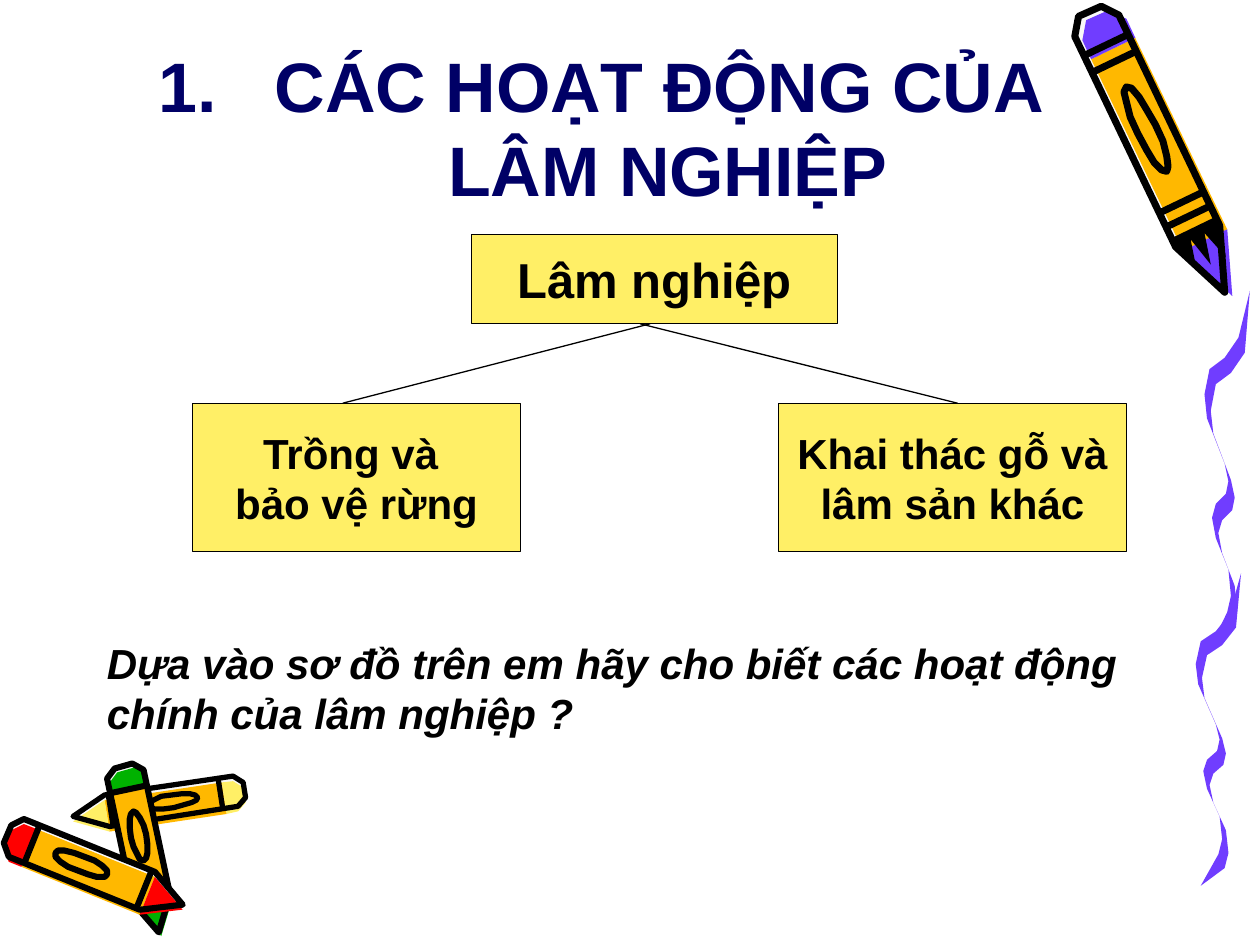
from dataclasses import dataclass
from math import cos, hypot, pi, sin

from lxml import etree
from pptx import Presentation
from pptx.dml.color import RGBColor
from pptx.enum.shapes import MSO_CONNECTOR, MSO_SHAPE
from pptx.enum.text import MSO_ANCHOR, MSO_AUTO_SIZE, PP_ALIGN
from pptx.oxml.ns import qn
from pptx.util import Pt

PX = 9144  # EMU per px, 100 px to the inch
FONT = "Arial"
LINE = MSO_CONNECTOR.STRAIGHT
RECT = MSO_SHAPE.RECTANGLE
CENTER = PP_ALIGN.CENTER
MIDDLE, BOTTOM = MSO_ANCHOR.MIDDLE, MSO_ANCHOR.BOTTOM
FIXED = MSO_AUTO_SIZE.NONE
HEX = {
    "ink": "000000", "navy": "000066", "violet": "703DFF", "amber": "FFB800",
    "lemon": "FFEF66", "red": "FF0000", "green": "00B200", "pale": "F8F8F8",
}

# Crayon corners: share of the length from the tail, share of the half width.
NECK, CAP = 0.8, 0.12
TAIL = [(0.05, 1), (0, 0.5), (0, -0.5), (0.05, -1)]
HULL = TAIL + [(NECK, -1), (1, 0), (NECK, 1)]
BARREL = [(CAP, -1), (NECK, -1), (NECK, 1), (CAP, 1)]
BUTT = TAIL + [(CAP, -1), (CAP, 1)]
POINT = [(NECK, -1), (1, 0), (NECK, 1)]
OVAL = [(0.42 + 0.15 * cos(n * pi / 8), 0.4 * sin(n * pi / 8)) for n in range(16)]
TEETH = [(NECK + 0.1 * (n % 2), n / 3 - 1) for n in range(7)]
COLLAR = [(NECK - 0.03, 1), (NECK - 0.03, -1)] + TEETH

# Upper edge of one ribbon wave; the lower edge is a slanted nib away.
WAVE, NIB = (36, 248), (5, 11)
EDGE = [
    (36, 0), (27, 32), (16, 46), (4, 54), (0, 72), (2, 88), (16, 120), (19, 132),
    (17, 141), (9, 148), (6, 157), (9, 171), (19, 193), (21, 211), (18, 223), (4, 248),
]


@dataclass
class Crayon:
    tail: tuple
    tip: tuple
    width: int
    tint: str
    shift: tuple  # how far the colour slips from the ink
    pen: float
    bands: tuple = (0.14, 0.78)
    collar: bool = False


CRAYONS = [
    Crayon((194, 27), (58, 48), 25, "lemon", (0, 4), 3),
    Crayon((98, 8), (126, 140), 30, "green", (2, 3), 3.5),
    Crayon((6, 62), (145, 118), 32, "red", (0, 4), 3.5),
]
PENCIL = Crayon((65, 9), (172, 232), 39, "violet", (6, 3), 4, (0.12, 0.18, 0.68, 0.73), True)

# Left offset, width, text, and where the branch line starts and ends.
BRANCHES = [
    (0, 260, "Trồng và \nbảo vệ rừng", 363, 119),
    (465, 276, " Khai thác gỗ và \nlâm sản khác", 355, 607),
]


def color(part, tint):
    part.rgb = RGBColor.from_string(HEX[tint])


def paint(shape, tint=None, pen=0):
    """Set the fill, and an ink line if pen is given."""
    shape.shadow.inherit = False
    if tint:
        shape.fill.solid()
        color(shape.fill.fore_color, tint)
    else:
        shape.fill.background()
    if pen:
        color(shape.line.color, "ink")
        shape.line.width = Pt(pen)
    else:
        shape.line.fill.background()


def style(frame, size, tint="ink", italic=False, align=None):
    for para in frame.paragraphs:
        para.alignment = align
        for run in para.runs:
            font = run.font
            font.name, font.size = FONT, Pt(size)
            font.bold, font.italic = True, italic
            color(font.color, tint)


def rule(slide, start, end, width):
    """Draw a plain ink line."""
    line = slide.shapes.add_connector(LINE, *(round(v * PX) for v in (*start, *end)))
    color(line.line.color, "ink")
    line.line.width = Pt(width)
    etree.SubElement(line._element.spPr, qn("a:effectLst"))


def outline(slide, dots, tint=None, pen=0):
    maker = slide.shapes.build_freeform(*dots[0], scale=PX)
    maker.add_line_segments(dots[1:], close=True)
    paint(maker.convert_to_shape(), tint, pen)


def crayon(slide, left, top, item):
    """Lay the colours first, then the ink over them, along tail to tip."""
    (x, y), (tipx, tipy) = item.tail, item.tip
    dx, dy = tipx - x, tipy - y
    half = item.width / 2 / hypot(dx, dy)

    def place(dots, shift=(0, 0)):
        return [(left + x + shift[0] + u * dx - v * half * dy,
                 top + y + shift[1] + u * dy + v * half * dx) for u, v in dots]

    outline(slide, place(HULL), "pale")
    for part, tint in ((BARREL, "amber"), (BUTT, item.tint), (POINT, item.tint)):
        outline(slide, place(part, item.shift), tint)
    for part in (HULL, OVAL):
        outline(slide, place(part), pen=item.pen)
    for u in item.bands:
        rule(slide, *place([(u, -1), (u, 1)]), item.pen)
    if item.collar:
        outline(slide, place(COLLAR), "ink")


def ribbon(slide, left, top, width, height):
    """Stretch one wave to the box."""
    lower = [(x + NIB[0], y + NIB[1]) for x, y in EDGE[1:-1]]
    wide, high = width / WAVE[0], height / WAVE[1]
    dots = [(left + x * wide, top + y * high) for x, y in EDGE + lower[::-1]]
    outline(slide, dots, "violet")


def title(slide, *box):
    shape = slide.shapes.title
    slide.shapes._spTree.append(shape._element)  # bring to front
    shape.left, shape.top, shape.width, shape.height = (v * PX for v in box)
    frame = shape.text_frame
    frame.text = "CÁC HOẠT ĐỘNG CỦA \vLÂM NGHIỆP"
    frame.auto_size, frame.vertical_anchor = FIXED, BOTTOM
    props = frame.paragraphs[0]._p.get_or_add_pPr()
    props.set("marL", str(92 * PX))
    props.set("indent", str(-92 * PX))
    etree.SubElement(props, qn("a:buFont"), typeface=FONT)
    etree.SubElement(props, qn("a:buAutoNum"), type="arabicPeriod")
    style(frame, 40, "navy", align=CENTER)


def node(slide, box, text, size):
    shape = slide.shapes.add_shape(RECT, *(v * PX for v in box))
    paint(shape, "lemon", 0.75)
    frame = shape.text_frame
    frame.text = text
    frame.word_wrap, frame.vertical_anchor = False, MIDDLE
    style(frame, size, align=CENTER)


def tree(slide, left, top):
    """Draw the root with its two branches."""
    base, low = top + 71, top + 134
    node(slide, (left + 221, top, 291, base - top), "Lâm nghiệp", 28)
    for side, width, text, start, end in BRANCHES:
        node(slide, (left + side, low, width, 118), text, 24)
        rule(slide, (left + start, base), (left + end, low), 0.75)


def ask(slide, *box):
    frame = slide.shapes.add_textbox(*(v * PX for v in box)).text_frame
    frame.word_wrap = True
    frame.text = "Dựa vào sơ đồ trên em hãy cho biết các hoạt động chính của lâm nghiệp ?"
    style(frame, 24, italic=True)


def main():
    deck = Presentation()
    deck.slide_width, deck.slide_height = 1000 * PX, 750 * PX
    slide = deck.slides.add_slide(deck.slide_layouts[5])
    for item in CRAYONS:
        crayon(slide, 0, 600, item)
    ribbon(slide, 949, 455, 36, 248)
    ribbon(slide, 956, 231, 36, 284)
    crayon(slide, 800, 0, PENCIL)
    title(slide, 59, 48, 850, 124)
    tree(slide, 153, 186)
    ask(slide, 75, 501, 843, 91)
    deck.save("out.pptx")


if __name__ == "__main__":
    main()
